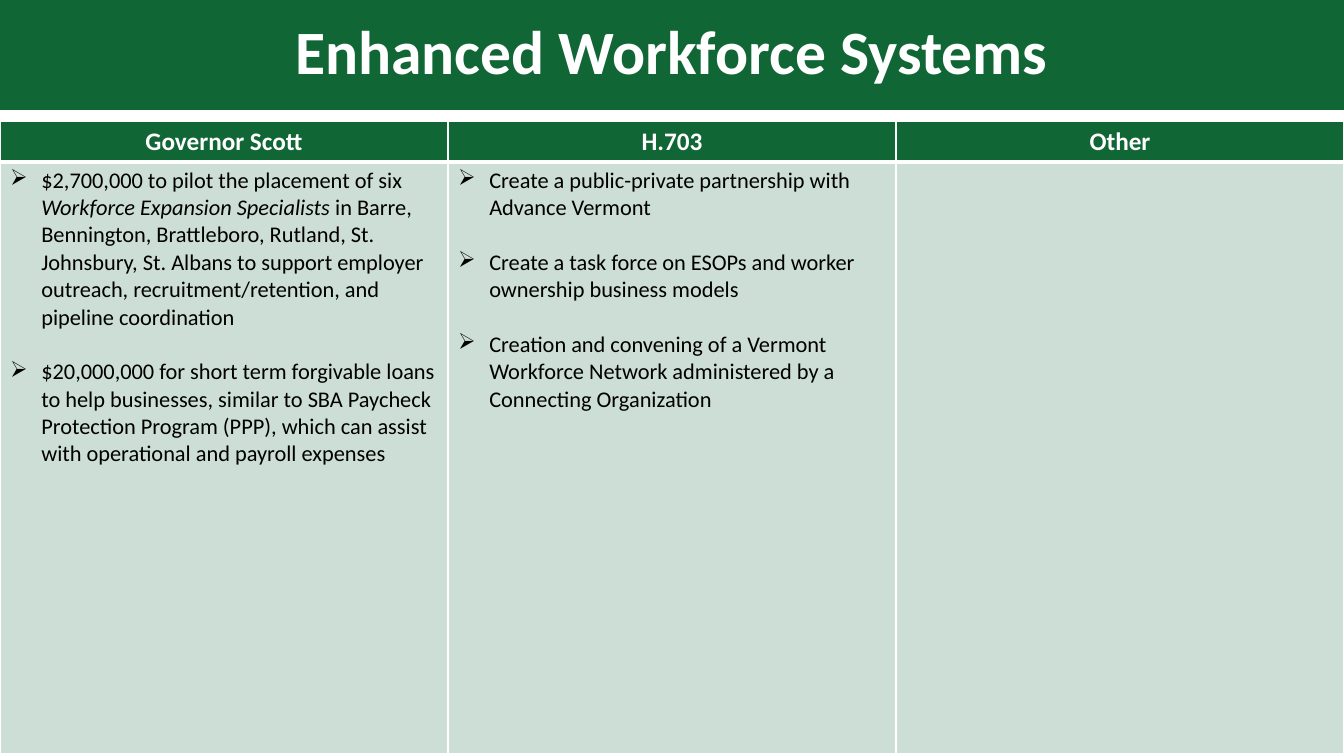
from lxml.etree import SubElement
from pptx import Presentation
from pptx.dml.color import RGBColor
from pptx.enum.shapes import MSO_SHAPE
from pptx.enum.text import MSO_ANCHOR, PP_ALIGN
from pptx.oxml import parse_xml
from pptx.oxml.ns import nsdecls, qn
from pptx.util import Inches, Pt

GREEN = RGBColor(0x10, 0x66, 0x35)
PALE = RGBColor(0xCD, 0xDE, 0xD6)
WHITE = RGBColor(0xFF, 0xFF, 0xFF)
BLACK = RGBColor(0, 0, 0)

# Each column: heading, then bullets made of (text, italic) runs
COLUMNS = [
    ("Governor Scott", [
        [("$2,700,000 to pilot the placement of six ", False),
         ("Workforce Expansion Specialists ", True),
         ("in Barre, Bennington, Brattleboro, Rutland, St. Johnsbury, "
          "St. Albans to support employer outreach, recruitment/retention, "
          "and pipeline coordination", False)],
        [("$20,000,000 for short term forgivable loans to help businesses, "
          "similar to SBA Paycheck Protection Program (PPP), which can assist "
          "with operational and payroll expenses", False)],
    ]),
    ("H.703", [
        [("Create a public-private partnership with Advance Vermont", False)],
        [("Create a task force on ESOPs and worker ownership business models",
          False)],
        [("Creation and convening of a Vermont Workforce Network administered "
          "by a Connecting Organization", False)],
    ]),
    ("Other", []),
]


def write(para, text, size=16, color=BLACK, bold=False, italic=False,
          align=PP_ALIGN.LEFT):
    para.alignment = align
    run = para.add_run()
    run.text = text
    font = run.font
    font.name, font.size = "Calibri", Pt(size)
    font.bold, font.italic = bold, italic
    font.color.rgb = color


def paint(cell, color, top, bottom):
    """Fill a cell and give it white borders, with widths in points."""
    cell.fill.solid()
    cell.fill.fore_color.rgb = color
    props = cell._tc.get_or_add_tcPr()
    sides = [("lnL", 1), ("lnR", 1), ("lnT", top), ("lnB", bottom)]
    for pos, (side, width) in enumerate(sides):
        props.insert(pos, parse_xml(
            f'<a:{side} {nsdecls("a")} w="{Pt(width)}"><a:solidFill>'
            f'<a:srgbClr val="{WHITE}"/></a:solidFill></a:{side}>'))


deck = Presentation()
deck.slide_width, deck.slide_height = Inches(13.33), Inches(7.5)
slide = deck.slides.add_slide(deck.slide_layouts[6])

banner = slide.shapes.add_shape(
    MSO_SHAPE.RECTANGLE, 0, 0, deck.slide_width, Inches(1.09))
banner.shadow.inherit = False
banner.fill.solid()
banner.fill.fore_color.rgb = GREEN
banner.line.fill.background()
banner.text_frame.vertical_anchor = MSO_ANCHOR.MIDDLE
title = banner.text_frame.paragraphs[0]
title.line_spacing = 0.9
write(title, "Enhanced Workforce Systems", size=44, color=WHITE, bold=True,
      align=PP_ALIGN.CENTER)

table = slide.shapes.add_table(
    2, len(COLUMNS), 0, Inches(1.2), deck.slide_width, Inches(6.27)).table
table.rows[0].height = Inches(0.4)
table.rows[1].height = Inches(5.87)

for col, (heading, bullets) in enumerate(COLUMNS):
    head, body = table.cell(0, col), table.cell(1, col)
    paint(head, GREEN, top=1, bottom=3)
    paint(body, PALE, top=3, bottom=1)
    write(head.text_frame.paragraphs[0], heading, size=18, color=WHITE,
          bold=True, align=PP_ALIGN.CENTER)
    frame = body.text_frame
    for num, runs in enumerate(bullets):
        para = frame.add_paragraph() if num else frame.paragraphs[0]
        props = para._p.get_or_add_pPr()
        props.set("marL", str(Inches(0.31)))
        props.set("indent", str(-Inches(0.31)))
        SubElement(props, qn("a:buChar"), char="➢")
        if num:
            para.space_before = Pt(19.5)
        for text, italic in runs:
            write(para, text, italic=italic)

deck.save("out.pptx")
